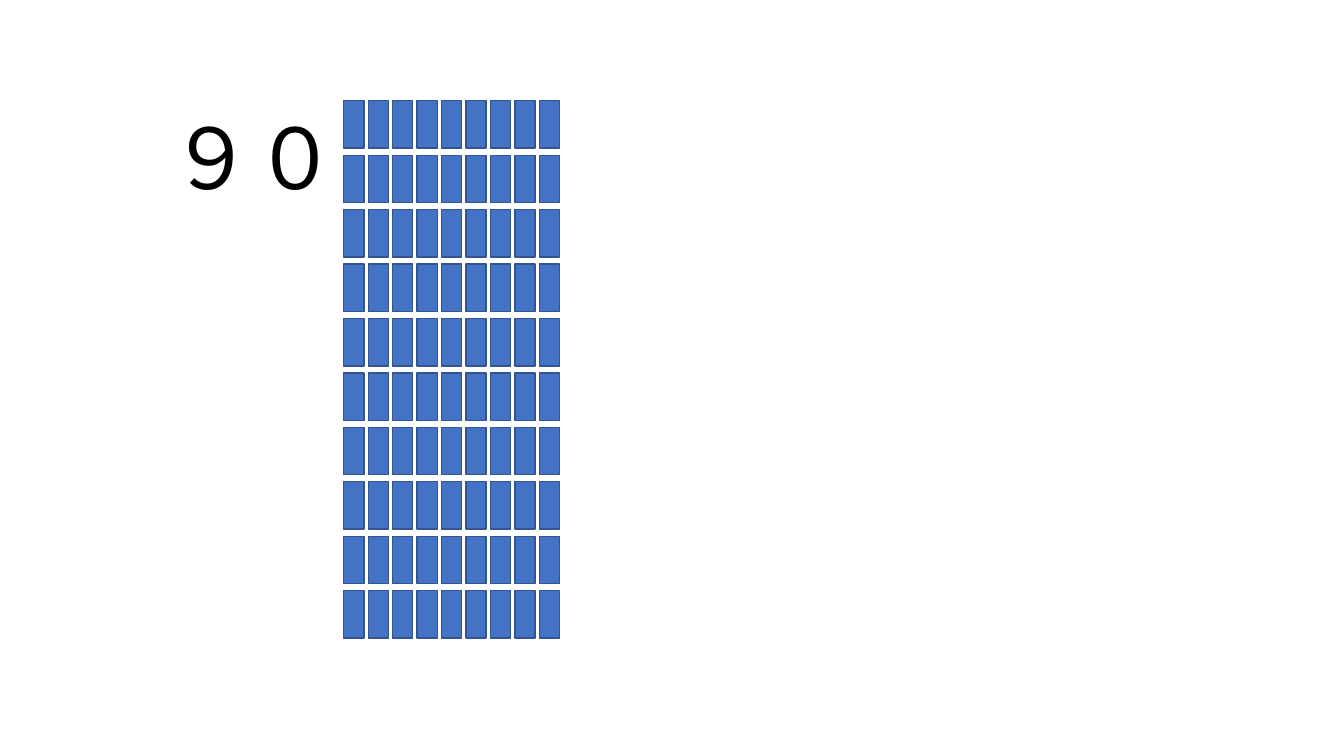
from dataclasses import dataclass

from lxml import etree
from pptx import Presentation
from pptx.dml.color import RGBColor
from pptx.enum import shapes, text
from pptx.oxml import ns
from pptx.slide import Slide
from pptx.util import Inches, Pt

COLORS = {"block": "4472C4", "edge": "325491", "digits": "000000"}
FONT = "Noto Sans CJK JP"

TENS = 9
UNITS_PER_TEN = 10
FIRST_LEFT, LAST_LEFT = 3.41, 5.35
TOP = 1.0
ROW_PITCH = 0.54
BLOCK_WIDTH, BLOCK_HEIGHT = 0.2, 0.47


@dataclass(frozen=True)
class TenRod:
    """A column of unit blocks that together stand for ten."""
    left: float
    top: float
    units: int


def color(name: str) -> RGBColor:
    return RGBColor.from_string(COLORS[name])


def draw_ten_rod(slide: Slide, rod: TenRod) -> None:
    group = slide.shapes.add_group_shape()
    for row in range(rod.units):
        block = group.shapes.add_shape(
            shapes.MSO_SHAPE.RECTANGLE,
            Inches(rod.left), Inches(rod.top + row * ROW_PITCH),
            Inches(BLOCK_WIDTH), Inches(BLOCK_HEIGHT))
        block.shadow.inherit = False
        block.fill.solid()
        block.fill.fore_color.rgb = color("block")
        block.line.color.rgb = color("edge")
        block.line.width = Pt(1)


def draw_number(slide: Slide, digits: str) -> None:
    number = slide.shapes.add_textbox(
        Inches(0.75), Inches(TOP), Inches(2.87), Inches(1.11))
    frame = number.text_frame
    frame.word_wrap = True
    frame.auto_size = text.MSO_AUTO_SIZE.SHAPE_TO_FIT_TEXT
    frame.text = digits
    font = frame.paragraphs[0].runs[0].font
    font.size = Pt(60)
    font.color.rgb = color("digits")
    font.name = FONT
    # Full-width digits take the East Asian typeface.
    properties = frame.paragraphs[0].runs[0].font._element
    etree.SubElement(properties, ns.qn("a:ea"), typeface=FONT)


def main() -> None:
    deck = Presentation()
    deck.slide_width, deck.slide_height = Inches(13.33), Inches(7.5)
    slide = deck.slides.add_slide(deck.slide_layouts[6])

    draw_number(slide, "　９０")
    rod_pitch = (LAST_LEFT - FIRST_LEFT) / (TENS - 1)
    for column in range(TENS):
        draw_ten_rod(slide, TenRod(FIRST_LEFT + column * rod_pitch, TOP, UNITS_PER_TEN))

    deck.save("out.pptx")


if __name__ == "__main__":
    main()
